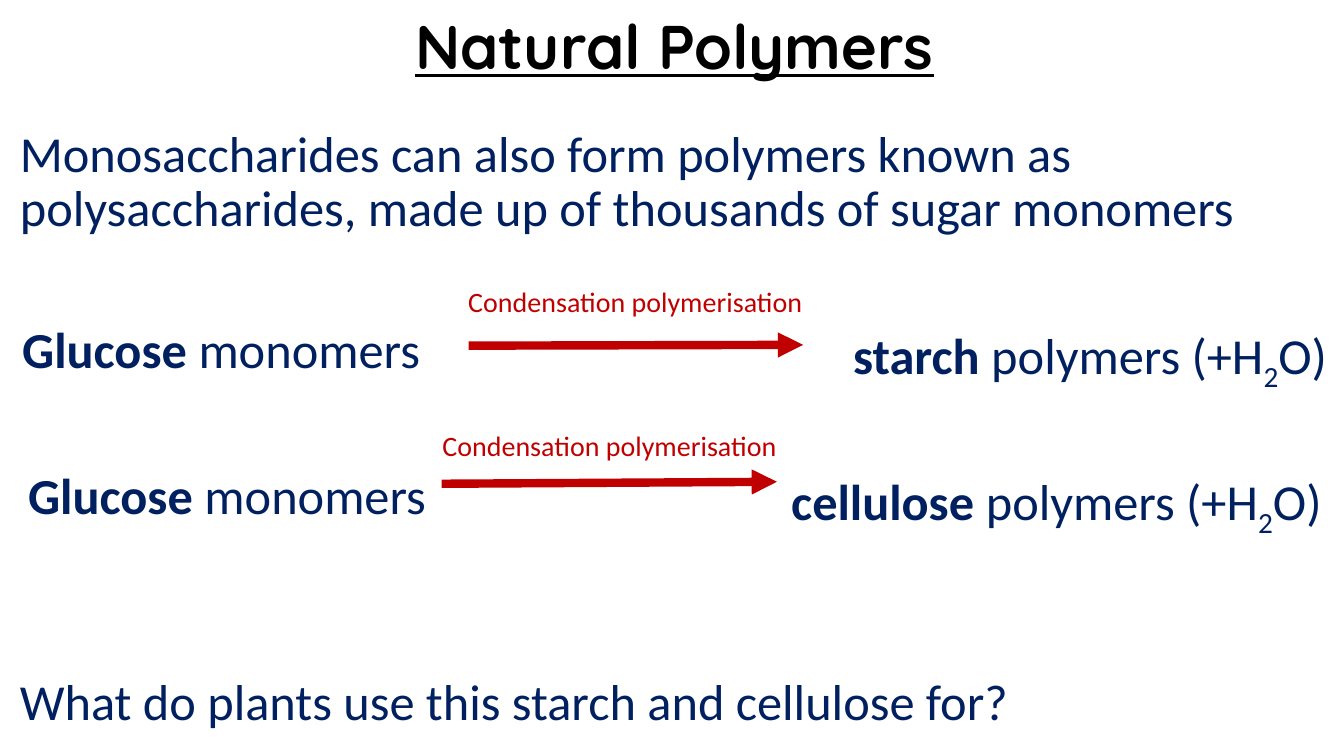
from pptx import Presentation
from pptx import util as u
from pptx.dml.color import RGBColor
from pptx.enum import shapes, text
from pptx.oxml.ns import qn
from lxml import etree

NAVY, RED = "002060", "C00000"
BODY = dict(name="Calibri", size=u.Pt(36), color=NAVY)
LABEL = dict(name="Calibri", size=u.Pt(20), color=RED)
HEADING = dict(name="Quicksand", size=u.Pt(44), color="000000", bold=True, underline=True)


def rgb(hex_string):
    """Turn a hex string into a colour."""
    return RGBColor.from_string(hex_string)


class PolymerSlide:
    """Holds the current slide and draws its elements in one style."""

    def __init__(self, deck):
        """Add a blank slide to the deck."""
        self.slide = deck.slides.add_slide(deck.slide_layouts[6])

    def set_words(self, holder, runs, style, spacing=0.9, align=text.PP_ALIGN.LEFT):
        """Fill a shape with one paragraph of (words, format) runs."""
        frame = holder.text_frame
        layout = dict(word_wrap=True, margin_left=0, margin_right=0, margin_top=0, margin_bottom=0)
        for key, value in layout.items():
            setattr(frame, key, value)
        paragraph = frame.paragraphs[0]
        paragraph.alignment, paragraph.line_spacing = align, spacing
        for words, extra in runs:
            run = paragraph.add_run()
            run.text = words
            for key, value in {**style, **extra}.items():
                if key == "color":
                    run.font.color.rgb = rgb(value)
                elif key == "baseline":
                    run.font._element.set("baseline", value)
                else:
                    setattr(run.font, key, value)

    def title(self, words, left, top, width, height):
        """Draw the heading on a white bar."""
        bar = self.slide.shapes.add_shape(
            shapes.MSO_SHAPE.RECTANGLE, *map(u.Cm, (left, top, width, height)))
        bar.shadow.inherit = False
        bar.fill.solid()
        bar.fill.fore_color.rgb = rgb("FFFFFF")
        bar.line.fill.background()
        self.set_words(bar, [(words, {})], HEADING, align=text.PP_ALIGN.CENTER)
        bar.text_frame.vertical_anchor = text.MSO_ANCHOR.MIDDLE

    def passage(self, runs, left, top, width, height=1.5, style=BODY, spacing=0.9):
        """Draw a plain text box."""
        box = self.slide.shapes.add_textbox(*map(u.Cm, (left, top, width, height)))
        self.set_words(box, runs, style, spacing)

    def arrow(self, *ends):
        """Draw a red arrow from start to finish."""
        line = self.slide.shapes.add_connector(
            shapes.MSO_CONNECTOR.STRAIGHT, *map(u.Cm, ends))
        line.line.color.rgb = rgb(RED)
        line.line.width = u.Pt(6)
        etree.SubElement(line.line._get_or_add_ln(), qn("a:tailEnd"), type="triangle")
        etree.SubElement(line._element.spPr, qn("a:effectLst"))

    def reaction(self, product, top, monomer_left, product_left, label, arrow):
        """Draw one row: monomers, labelled arrow, polymers."""
        bold = dict(bold=True)
        self.passage([("Glucose", bold), (" monomers", {})], monomer_left, top, 10.5)
        self.passage([(product, bold), (" polymers (+H", {}),
                      ("2", dict(baseline="-25000")), ("O)", {})],
                     product_left, top, 33.8 - product_left)
        self.arrow(*arrow)
        self.passage([("Condensation polymerisation", {})], *label, 8.8, 0.9, LABEL, 1.0)


def main():
    """Build and save the slide."""
    deck = Presentation()
    deck.slide_width, deck.slide_height = u.Cm(33.87), u.Cm(19.05)
    page = PolymerSlide(deck)
    page.title("Natural Polymers", 0.3, 0.2, 33.4, 2.1)
    page.passage([("Monosaccharides can also form polymers known as polysaccharides, "
                   "made up of thousands of sugar monomers", {})], 0.5, 3.25, 33.1, 2.9)
    page.reaction("starch", 8.2, 0.56, 21.5, (11.8, 7.16), (11.81, 8.71, 20.24, 8.69))
    page.reaction("cellulose", 11.87, 0.71, 19.94, (11.15, 10.8), (11.13, 12.19, 19.58, 12.14))
    page.passage([("What do plants use this starch and cellulose for?", {})], 0.5, 17.06, 33.1)
    deck.save("out.pptx")


if __name__ == "__main__":
    main()
